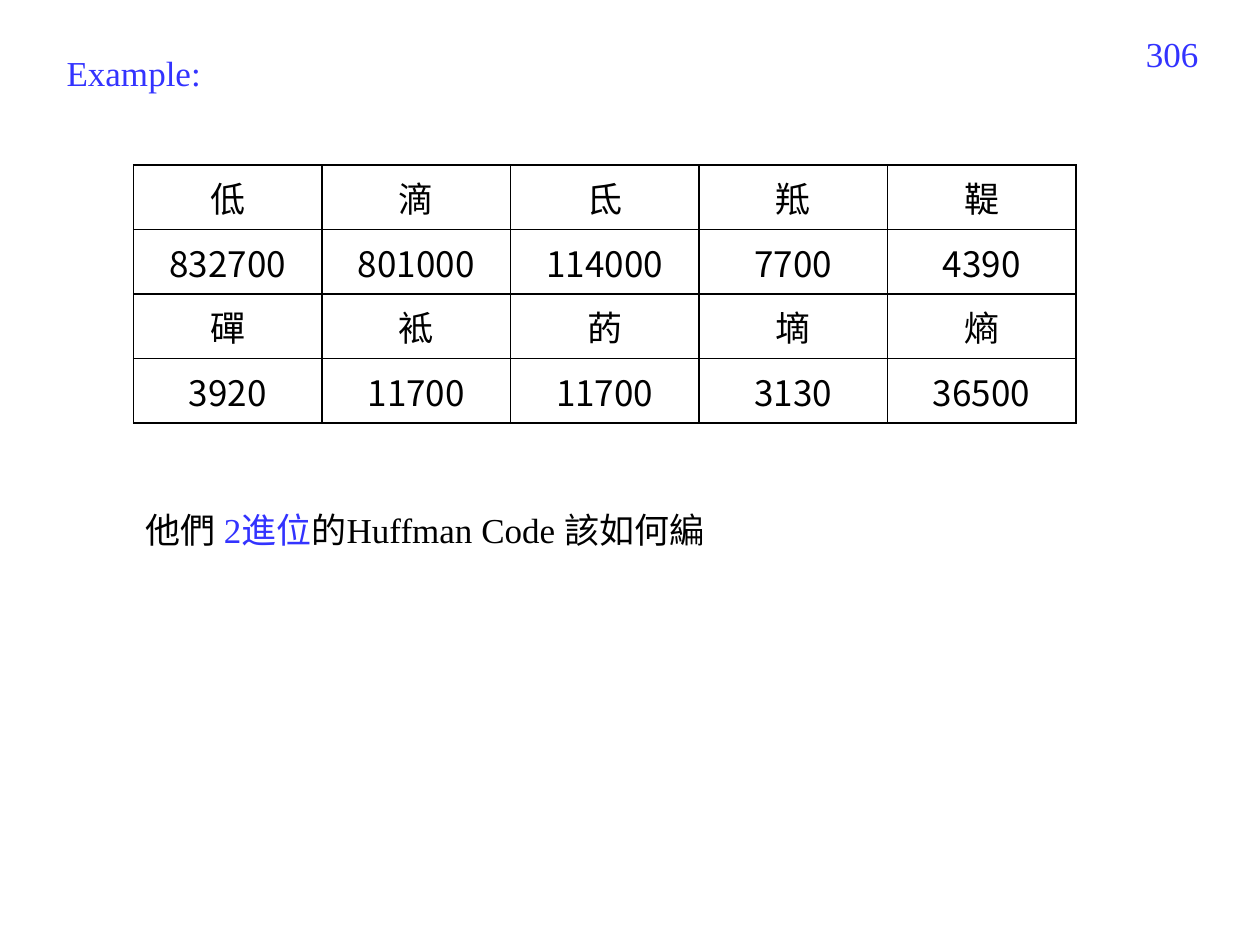
from lxml import etree
from pptx import Presentation
from pptx.dml.color import RGBColor
from pptx.enum.text import MSO_ANCHOR, PP_ALIGN
from pptx.oxml.ns import qn
from pptx.util import Inches, Pt

BLACK = RGBColor(0x00, 0x00, 0x00)
BLUE = RGBColor(0x33, 0x33, 0xFF)
LEFT, CENTER, RIGHT = PP_ALIGN.LEFT, PP_ALIGN.CENTER, PP_ALIGN.RIGHT
TOP, MIDDLE = MSO_ANCHOR.TOP, MSO_ANCHOR.MIDDLE

CHARACTER_COUNTS = [
    ["低", "滴", "氐", "羝", "鞮"],
    ["832700", "801000", "114000", "7700", "4390"],
    ["磾", "袛", "菂", "墑", "熵"],
    ["3920", "11700", "11700", "3130", "36500"],
]


class SlideBuilder:
    text_font = "Times New Roman"
    table_font = "Noto Sans CJK SC"
    size = Pt(20)
    border_width = Pt(1)

    def __init__(self, slide):
        self.slide = slide

    def style(self, paragraph, font_name, alignment):
        paragraph.alignment = alignment
        paragraph.font.size = self.size
        paragraph.font.name = font_name
        # East Asian characters take their own typeface.
        properties = paragraph._p.pPr.find(qn("a:defRPr"))
        etree.SubElement(properties, qn("a:ea"), typeface=self.table_font)

    def text(self, left, top, width, height, runs, alignment=LEFT, anchor=TOP):
        """Add a one-paragraph text box from (text, colour) runs."""
        box = self.slide.shapes.add_textbox(
            Inches(left), Inches(top), Inches(width), Inches(height))
        frame = box.text_frame
        frame.word_wrap = True
        frame.vertical_anchor = anchor
        paragraph = frame.paragraphs[0]
        self.style(paragraph, self.text_font, alignment)
        for content, color in runs:
            run = paragraph.add_run()
            run.text = content
            run.font.color.rgb = color

    def table(self, left, top, width, height, rows):
        frame = self.slide.shapes.add_table(
            len(rows), len(rows[0]),
            Inches(left), Inches(top), Inches(width), Inches(height))
        table = frame.table
        table.first_row = table.horz_banding = False
        for row, values in enumerate(rows):
            for column, value in enumerate(values):
                cell = table.cell(row, column)
                cell.text = value
                cell.vertical_anchor = MIDDLE
                paragraph = cell.text_frame.paragraphs[0]
                paragraph.font.color.rgb = BLACK
                self.style(paragraph, self.table_font, CENTER)
                self.borders(cell)
                cell.fill.background()

    def borders(self, cell):
        properties = cell._tc.get_or_add_tcPr()
        for side in ("a:lnL", "a:lnR", "a:lnT", "a:lnB"):
            line = etree.SubElement(properties, qn(side), w=str(self.border_width))
            fill = etree.SubElement(line, qn("a:solidFill"))
            etree.SubElement(fill, qn("a:srgbClr"), val=str(BLACK))


def main():
    presentation = Presentation()
    presentation.slide_width = Inches(10)
    presentation.slide_height = Inches(7.5)
    slide = presentation.slides.add_slide(presentation.slide_layouts[6])
    builder = SlideBuilder(slide)

    builder.text(7.28, 0.21, 2.33, 0.52, [("306", BLUE)], alignment=RIGHT)
    question = [("他們 ", BLACK), ("2進位", BLUE), ("的Huffman Code 該如何編", BLACK)]
    builder.text(1.06, 3.99, 4.71, 0.43, question, anchor=MIDDLE)
    builder.table(1.06, 1.31, 7.48, 2.05, CHARACTER_COUNTS)
    builder.text(0.43, 0.36, 2.2, 0.43, [("Example:", BLUE)])

    presentation.save("out.pptx")


if __name__ == "__main__":
    main()
